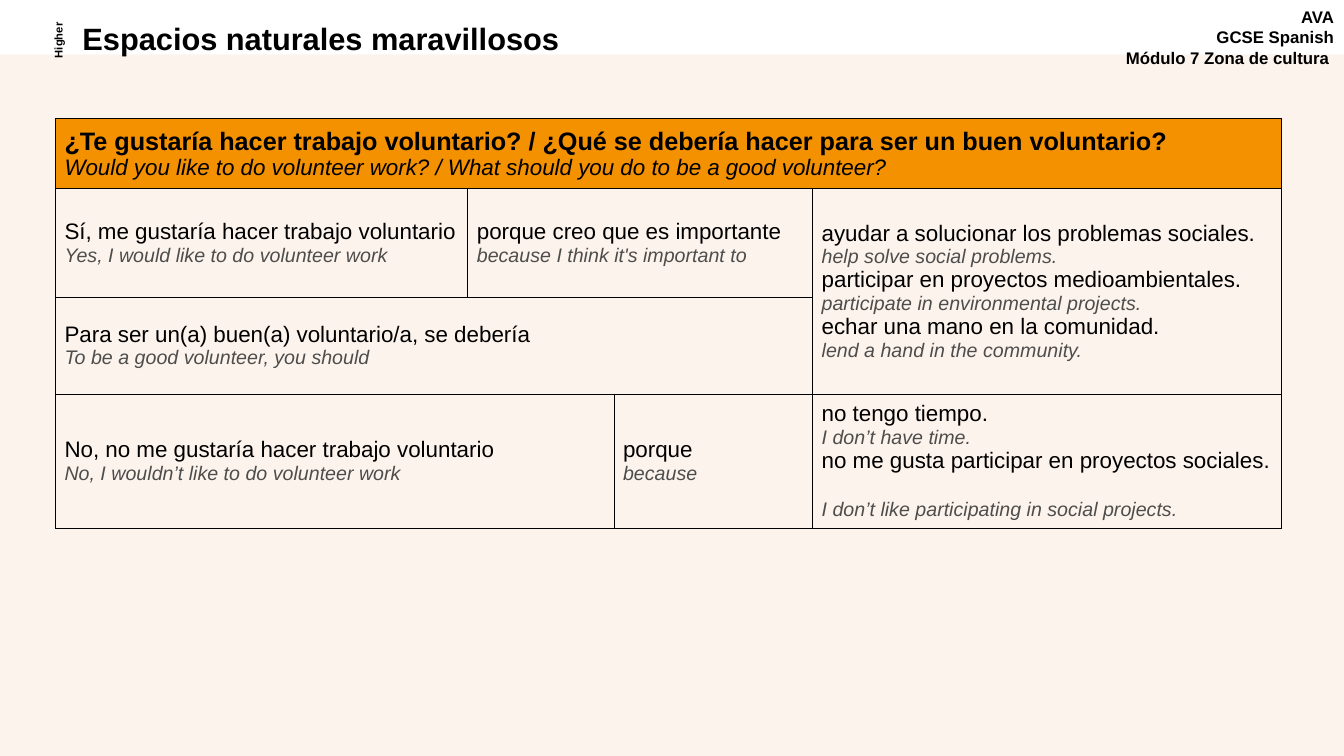
from lxml import etree
from pptx import Presentation
from pptx import util as u
from pptx.dml.color import RGBColor
from pptx.enum import shapes, text
from pptx.oxml import ns

COLOURS = {"panel": "FDF3ED", "heading": "F39100", "ink": "000000", "translation": "4D4D4C"}
FONT = "Arial"
COLUMNS = [4.09, 1.45, 1.97, 4.65]
ROWS = [0.69, 1.08, 0.96, 1.26]
HEADING = ("¿Te gustaría hacer trabajo voluntario? / ¿Qué se debería hacer para ser un buen voluntario?",
           "Would you like to do volunteer work? / What should you do to be a good volunteer?")
PHRASES = [
    (1, 0, 1, 1, [("Sí, me gustaría hacer trabajo voluntario", "Yes, I would like to do volunteer work")]),
    (1, 1, 1, 2, [("porque creo que es importante", "because I think it's important to")]),
    (1, 3, 2, 1, [("ayudar a solucionar los problemas sociales.", "help solve social problems."),
                  ("participar en proyectos medioambientales.", "participate in environmental projects."),
                  ("echar una mano en la comunidad.", "lend a hand in the community.")]),
    (2, 0, 1, 3, [("Para ser un(a) buen(a) voluntario/a, se debería", "To be a good volunteer, you should")]),
    (3, 0, 1, 2, [("No, no me gustaría hacer trabajo voluntario", "No, I wouldn’t like to do volunteer work")]),
    (3, 2, 1, 1, [("porque", "because")]),
    (3, 3, 1, 1, [("no tengo tiempo.", "I don’t have time."),
                  ("no me gusta participar en proyectos sociales.", "I don’t like participating in social projects.")]),
]


def style_font(font, size, colour="ink", bold=False, italic=False):
    """Apply the typeface, size, colour and emphasis to a font."""
    font.name, font.size, font.bold, font.italic = FONT, u.Pt(size), bold, italic
    font.color.rgb = RGBColor.from_string(COLOURS[colour])


def add_label(page, box, lines, size, align, rotation=0):
    """Place bold lines of text in the given box."""
    label = page.shapes.add_textbox(*map(u.Inches, box))
    label.rotation = rotation
    frame = label.text_frame
    frame.word_wrap = True
    frame.text = "\n".join(lines)
    for para in frame.paragraphs:
        para.alignment = align
        for span in para.runs:
            style_font(span.font, size, bold=True)
    return frame


def add_panel(page, box):
    """Draw the tinted panel behind the content."""
    panel = page.shapes.add_shape(shapes.MSO_SHAPE.RECTANGLE, *map(u.Inches, box))
    panel.shadow.inherit = False
    panel.fill.solid()
    panel.fill.fore_color.rgb = RGBColor.from_string(COLOURS["panel"])
    panel.line.fill.background()


def add_header(page, box):
    """Place the tier, title and course labels along the top band."""
    left, top, width, height = box
    align = text.PP_ALIGN
    course = ["AVA", "GCSE Spanish", "Módulo 7 Zona de cultura "]
    add_label(page, (left + width - 2.34, top + 0.02, 2.34, height), course, 12, align.RIGHT)
    title = add_label(page, (left + 0.72, top + 0.19, 8.53, 0.43),
                      ["Espacios naturales maravillosos"], 22, align.LEFT)
    title.paragraphs[0].line_spacing = 0.9
    add_label(page, (left + 0.18, top + 0.29, 0.78, 0.22), ["Higher"], 8, align.CENTER, 270)


def prepare_cell(cell):
    """Set the margins, anchor, borders and empty fill of a cell."""
    cell.margin_left = cell.margin_right = u.Inches(0.09)
    cell.margin_top = cell.margin_bottom = u.Inches(0.04)
    cell.vertical_anchor = text.MSO_ANCHOR.MIDDLE
    properties = cell._tc.get_or_add_tcPr()
    for side in ("lnL", "lnR", "lnT", "lnB"):
        border = etree.SubElement(properties, ns.qn("a:" + side), w=str(u.Pt(0.75)))
        fill = etree.SubElement(border, ns.qn("a:solidFill"))
        etree.SubElement(fill, ns.qn("a:srgbClr"), val=COLOURS["ink"])
    cell.fill.background()


def write_pairs(cell, pairs, spanish, english):
    """Fill a cell with Spanish lines, each followed by its translation."""
    cell.text_frame.text = "\n".join(line for pair in pairs for line in pair)
    for index, para in enumerate(cell.text_frame.paragraphs):
        for span in para.runs:
            style_font(span.font, **(english if index % 2 else spanish))


def add_phrase_table(page, box):
    """Build the table of model sentences in the given box."""
    table = page.shapes.add_table(len(ROWS), len(COLUMNS), *map(u.Inches, box)).table
    table.first_row = table.horz_banding = False
    for column, width in zip(table.columns, COLUMNS):
        column.width = u.Inches(width)
    for row, height in zip(table.rows, ROWS):
        row.height = u.Inches(height)
    for cell in table.iter_cells():
        prepare_cell(cell)

    heading = table.cell(0, 0)
    heading.merge(table.cell(0, len(COLUMNS) - 1))
    heading.fill.solid()
    heading.fill.fore_color.rgb = RGBColor.from_string(COLOURS["heading"])
    write_pairs(heading, [HEADING], {"size": 18, "bold": True}, {"size": 16, "italic": True})

    translation = {"size": 14, "colour": "translation", "italic": True}
    for row, column, height, width, pairs in PHRASES:
        cell = table.cell(row, column)
        if height * width > 1:
            cell.merge(table.cell(row + height - 1, column + width - 1))
        write_pairs(cell, pairs, {"size": 16}, translation)
    table.cell(3, 3).text_frame.paragraphs[-1].space_before = u.Pt(18)


def main():
    """Build and save the slide."""
    deck = Presentation()
    deck.slide_width, deck.slide_height = u.Inches(13.33), u.Inches(7.5)
    page = deck.slides.add_slide(deck.slide_layouts[6])
    add_panel(page, (0, 0.54, 13.33, 6.96))
    add_header(page, (0, 0, 13.33, 0.77))
    add_phrase_table(page, (0.55, 1.18, sum(COLUMNS), sum(ROWS)))
    deck.save("out.pptx")


if __name__ == "__main__":
    main()
